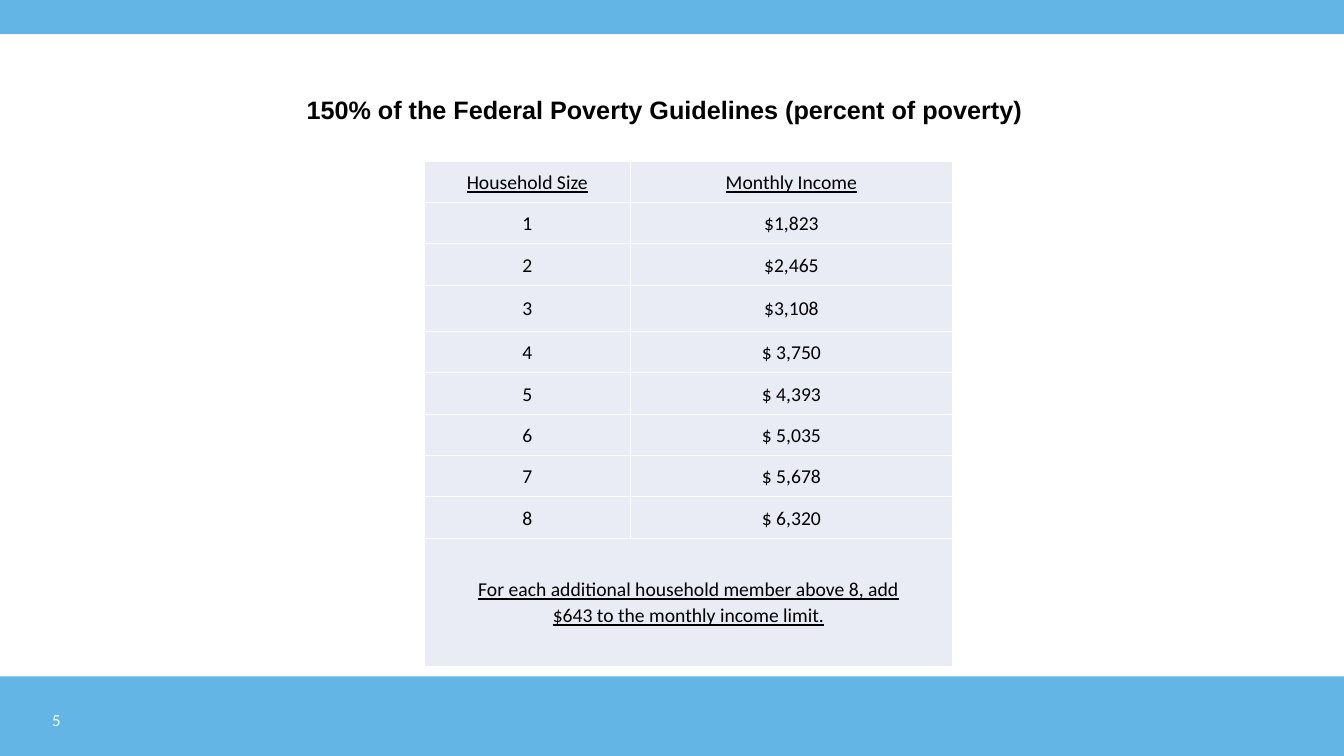
from lxml.etree import SubElement
from pptx import Presentation
from pptx.dml.color import RGBColor
from pptx.enum.shapes import MSO_SHAPE
from pptx.enum.text import MSO_ANCHOR, PP_ALIGN
from pptx.oxml.ns import qn
from pptx.util import Inches, Pt

SLIDE_WIDTH, SLIDE_HEIGHT = 13.33, 7.5
TITLE = "150% of the Federal Poverty Guidelines (percent of poverty)"
HEADINGS = ("Household Size", "Monthly Income")
MONTHLY_INCOMES = ("$1,823", "$2,465", "$3,108", "$ 3,750",
                   "$ 4,393", "$ 5,035", "$ 5,678", "$ 6,320")
ADDITIONAL_MEMBERS = ("For each additional household member above 8, add\n"
                      "$643 to the monthly income limit.")
COLUMN_WIDTHS = (2.04, 3.2)
ROW_HEIGHTS = [0.41] * 3 + [0.46] + [0.41] * 5 + [1.27]


def color(hex_string):
    return RGBColor.from_string(hex_string)


class GuidelineSlide:
    BLUE, PALE, WHITE, BLACK = "62B5E5", "E9EBF5", "FFFFFF", "000000"
    BODY_FONT, TITLE_FONT = "Calibri", "Arial"

    def __init__(self, slide):
        self.slide = slide

    def band(self, top, height):
        band = self.slide.shapes.add_shape(
            MSO_SHAPE.RECTANGLE, 0, Inches(top), Inches(SLIDE_WIDTH), Inches(height))
        band.shadow.inherit = False
        band.fill.solid()
        band.fill.fore_color.rgb = color(self.BLUE)
        band.line.fill.background()

    def style(self, paragraph, align, size, font, hex_color, bold=False, underline=False):
        paragraph.alignment = align
        paragraph.font.size = Pt(size)
        paragraph.font.name = font
        paragraph.font.color.rgb = color(hex_color)
        paragraph.font.bold = bold
        paragraph.font.underline = underline

    def text(self, words, left, top, width, height, wrap=True,
             anchor=MSO_ANCHOR.TOP, **style):
        box = self.slide.shapes.add_textbox(
            Inches(left), Inches(top), Inches(width), Inches(height))
        frame = box.text_frame
        frame.word_wrap = wrap
        frame.vertical_anchor = anchor
        frame.text = words
        self.style(frame.paragraphs[0], **style)

    def borders(self, cell):
        properties = cell._tc.get_or_add_tcPr()
        for side in ("lnL", "lnR", "lnT", "lnB"):
            line = SubElement(properties, qn(f"a:{side}"), w=str(Pt(1)))
            fill = SubElement(line, qn("a:solidFill"))
            SubElement(fill, qn("a:srgbClr"), val=self.WHITE)

    def cell(self, cell, words, underline):
        cell.margin_left = cell.margin_right = Inches(0.07)
        cell.margin_top = cell.margin_bottom = 0
        cell.vertical_anchor = MSO_ANCHOR.MIDDLE
        self.borders(cell)
        cell.fill.solid()
        cell.fill.fore_color.rgb = color(self.PALE)
        cell.text = words
        for paragraph in cell.text_frame.paragraphs:
            paragraph.line_spacing = 1.07
            self.style(paragraph, PP_ALIGN.CENTER, 14, self.BODY_FONT,
                       self.BLACK, underline=underline)

    def table(self, rows, left, top):
        """Draw the rows, with the last one merged across all columns."""
        table = self.slide.shapes.add_table(
            len(rows), len(COLUMN_WIDTHS), Inches(left), Inches(top),
            Inches(sum(COLUMN_WIDTHS)), Inches(sum(ROW_HEIGHTS))).table
        for column, width in zip(table.columns, COLUMN_WIDTHS):
            column.width = Inches(width)
        last = len(rows) - 1
        for index, (values, height) in enumerate(zip(rows, ROW_HEIGHTS)):
            table.rows[index].height = Inches(height)
            for column, words in enumerate(values):
                self.cell(table.cell(index, column), words, index in (0, last))
        table.cell(last, 0).merge(table.cell(last, len(COLUMN_WIDTHS) - 1))


def main():
    presentation = Presentation()
    presentation.slide_width = Inches(SLIDE_WIDTH)
    presentation.slide_height = Inches(SLIDE_HEIGHT)
    page = GuidelineSlide(presentation.slides.add_slide(presentation.slide_layouts[6]))

    page.band(6.71, 0.79)
    page.band(0, 0.34)
    page.text("5", 0.2, 6.94, 0.5, 0.4, anchor=MSO_ANCHOR.MIDDLE,
              align=PP_ALIGN.RIGHT, size=12, font=page.BODY_FONT, hex_color=page.WHITE)
    incomes = [(str(size), income) for size, income in enumerate(MONTHLY_INCOMES, 1)]
    page.table([HEADINGS, *incomes, (ADDITIONAL_MEMBERS, "")], 4.21, 1.6)
    page.text(TITLE, 2.82, 0.89, 7.54, 0.4, wrap=False, align=PP_ALIGN.CENTER,
              size=18, font=page.TITLE_FONT, hex_color=page.BLACK, bold=True)
    presentation.save("out.pptx")


if __name__ == "__main__":
    main()
